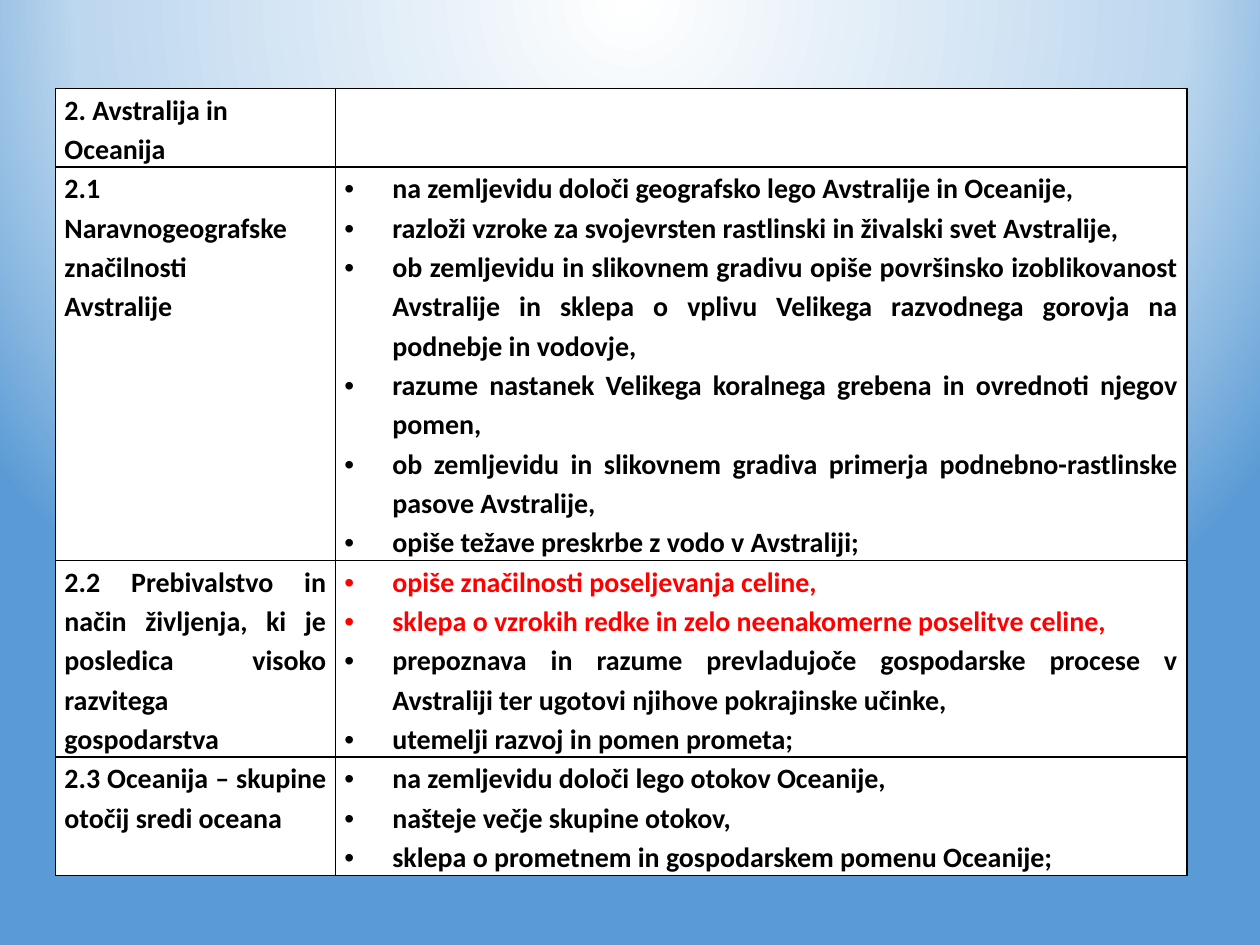
from lxml import etree
from pptx import Presentation
from pptx import oxml
from pptx.dml.color import RGBColor
from pptx.enum import text
from pptx.oxml import ns
from pptx.util import Cm, Pt

INK = {"text": "000000", "mark": "FF0000", "cell": "FFFFFF", "line": "000000"}
GLOW = {0: "FFFFFF", 70: "BDD7EE", 100: "5B9BD5"}
BOX = (Cm(1.12), Cm(1.78), Cm(22.81), Cm(14.92))
COLS = (Cm(5.64), Cm(17.17))
ROWS = (Cm(0.74), Cm(7.9), Cm(3.94), Cm(2.34))
HANG = Cm(0.97)

TOPICS = [
    (["2. Avstralija in Oceanija"], []),
    (["2.1 Naravnogeografske značilnosti", "Avstralije"], [
        "na zemljevidu določi geografsko lego Avstralije in Oceanije,",
        "razloži vzroke za svojevrsten rastlinski in živalski svet Avstralije,",
        "ob zemljevidu in slikovnem gradivu opiše površinsko izoblikovanost "
        "Avstralije in sklepa o vplivu Velikega razvodnega gorovja na "
        "podnebje in vodovje,",
        "razume nastanek Velikega koralnega grebena in ovrednoti njegov pomen,",
        "ob zemljevidu in slikovnem gradiva primerja podnebno-rastlinske "
        "pasove Avstralije,",
        "opiše težave preskrbe z vodo v Avstraliji;"]),
    (["2.2 Prebivalstvo in način življenja, ki je posledica visoko "
      "razvitega gospodarstva"], [
        "opiše značilnosti poseljevanja celine,",
        "sklepa o vzrokih redke in zelo neenakomerne poselitve celine,",
        "prepoznava in razume prevladujoče gospodarske procese v Avstraliji "
        "ter ugotovi njihove pokrajinske učinke,",
        "utemelji razvoj in pomen prometa;"]),
    (["2.3 Oceanija – skupine otočij sredi oceana"], [
        "na zemljevidu določi lego otokov Oceanije,",
        "našteje večje skupine otokov,",
        "sklepa o prometnem in gospodarskem pomenu Oceanije;"]),
]
MARKED = set(TOPICS[2][1][:2])


def paint(slide):
    """Give the slide a round glow that spreads from above its top edge."""
    stops = "".join(f'<a:gs pos="{pos * 1000}"><a:srgbClr val="{hue}"/></a:gs>'
                    for pos, hue in GLOW.items())
    back = oxml.parse_xml(
        f'<p:bg {ns.nsdecls("p", "a")}><p:bgPr><a:gradFill rotWithShape="1">'
        f'<a:gsLst>{stops}</a:gsLst><a:path path="circle">'
        '<a:fillToRect l="50000" t="-80000" r="50000" b="180000"/></a:path>'
        '</a:gradFill><a:effectLst/></p:bgPr></p:bg>')
    slide.element.cSld.insert(0, back)


def frame(cell):
    """Set the borders, fill and margins of one cell."""
    props = cell._tc.get_or_add_tcPr()
    for side in "LRTB":
        line = etree.SubElement(props, ns.qn(f"a:ln{side}"), w=str(Pt(1)))
        fill = etree.SubElement(line, ns.qn("a:solidFill"))
        etree.SubElement(fill, ns.qn("a:srgbClr"), val=INK["line"])
    cell.fill.solid()
    cell.fill.fore_color.rgb = RGBColor.from_string(INK["cell"])
    cell.margin_left = cell.margin_right = Cm(0.18)
    cell.margin_top = cell.margin_bottom = 0


def bullet(para):
    """Hang a paragraph behind a round bullet."""
    props = para._p.get_or_add_pPr()
    props.set("marL", str(HANG))
    props.set("indent", str(-HANG))
    etree.SubElement(props, ns.qn("a:buFont"), typeface="Arial")
    etree.SubElement(props, ns.qn("a:buChar"), char="•")


def write(cell, lines, align, listed=False):
    """Fill a cell with one bold paragraph for each line."""
    cell.text_frame.text = "\n".join(lines)
    for para in cell.text_frame.paragraphs:
        para.alignment = align
        para.line_spacing = 1.15
        if listed and para.text:
            bullet(para)
        font = para.font if not para.runs else para.runs[0].font
        font.name, font.size, font.bold = "Calibri", Pt(16), True
        hue = "mark" if para.text in MARKED else "text"
        font.color.rgb = RGBColor.from_string(INK[hue])


def goals(slide, left, top, width, height):
    """Place the table of topics and learning goals in the given box."""
    table = slide.shapes.add_table(
        len(ROWS), len(COLS), left, top, width, height).table
    table.first_row = table.horz_banding = False
    for col, size in zip(table.columns, COLS):
        col.width = size
    for row, size in zip(table.rows, ROWS):
        row.height = size
    for index, (title, aims) in enumerate(TOPICS):
        name, list_ = table.rows[index].cells
        frame(name)
        frame(list_)
        side = text.PP_ALIGN.JUSTIFY if index else text.PP_ALIGN.LEFT
        write(name, title, side)
        write(list_, aims, text.PP_ALIGN.JUSTIFY, listed=True)


def main():
    """Build the slide and save it."""
    deck = Presentation()
    deck.slide_width, deck.slide_height = Cm(25.4), Cm(19.05)
    slide = deck.slides.add_slide(deck.slide_layouts[6])
    paint(slide)
    goals(slide, *BOX)
    deck.save("out.pptx")


if __name__ == "__main__":
    main()
